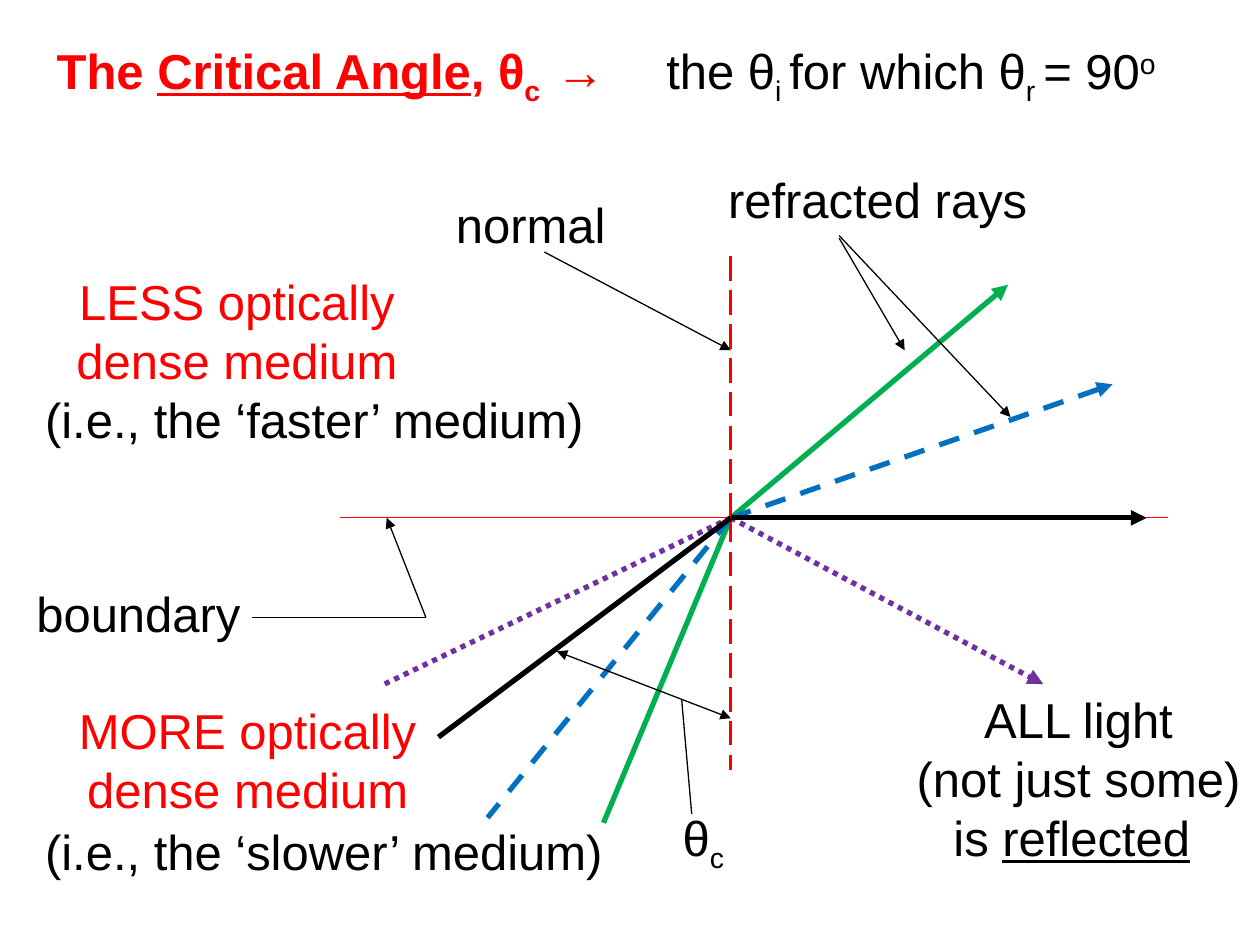
import pptx
import pptx.util
from pptx.dml.color import RGBColor
from pptx.enum.dml import MSO_LINE
from pptx.enum.shapes import MSO_CONNECTOR
from pptx.enum.text import MSO_ANCHOR, MSO_AUTO_SIZE, PP_ALIGN
from pptx.oxml.ns import qn
import lxml.etree

PX = 9144  # 100 px to the inch
FONT, SIZE = "Arial", 28
BLACK, RED = "000000", "FF0000"
GREEN, BLUE, PURPLE = "00B050", "0070C0", "7030A0"
SUB, SUPER = -25000, 30000


def color(hex_string):
    return RGBColor.from_string(hex_string)


def place(shape, box):
    shape.left, shape.top, shape.width, shape.height = (n * PX for n in box)


def write(shape, lines, ink=BLACK, align=PP_ALIGN.LEFT):
    """Fill a shape with lines; each line is a list of (text, formatting) spans."""
    frame = shape.text_frame
    frame.word_wrap = False
    frame.auto_size = MSO_AUTO_SIZE.SHAPE_TO_FIT_TEXT
    frame.vertical_anchor = MSO_ANCHOR.MIDDLE
    for index, spans in enumerate(lines):
        para = frame.add_paragraph() if index else frame.paragraphs[0]
        para.alignment = align
        for text, style in spans:
            span = para.add_run()
            span.text = text
            font = span.font
            font.name, font.size = FONT, pptx.util.Pt(SIZE)
            font.color.rgb = color(ink)
            font.bold = style.get("bold", False)
            font.underline = style.get("underline", False)
            if "baseline" in style:
                span._r.get_or_add_rPr().set("baseline", str(style["baseline"]))


def add_label(page, box, lines, ink=BLACK, align=PP_ALIGN.LEFT):
    label = page.shapes.add_textbox(0, 0, 0, 0)
    place(label, box)
    write(label, lines, ink, align)


def add_line(page, center, start, end, ink=BLACK, width=0.75, dash=None, arrows=()):
    """Draw a line between two offsets from the center; arrows names its ends."""
    x, y = center
    line = page.shapes.add_connector(
        MSO_CONNECTOR.STRAIGHT,
        (x + start[0]) * PX, (y + start[1]) * PX,
        (x + end[0]) * PX, (y + end[1]) * PX)
    line.line.color.rgb = color(ink)
    line.line.width = pptx.util.Pt(width)
    if dash:
        line.line.dash_style = dash
    outline = line.line._get_or_add_ln()
    for name in arrows:
        lxml.etree.SubElement(outline, qn("a:" + name)).set("type", "triangle")
    lxml.etree.SubElement(line._element.spPr, qn("a:effectLst"))


def add_heading(page, box):
    left, top, width, height = box
    split = 484  # where the definition starts
    bold = {"bold": True}
    title = page.shapes.title
    place(title, (left, top, 492, height))
    write(title, [[
        ("The ", bold),
        ("Critical Angle", {"bold": True, "underline": True}),
        (", θ", bold),
        ("c  ", {"bold": True, "baseline": SUB}),
        ("→", {})]], RED)
    add_label(page, (left + split, top, width - split, height), [[
        ("the θ", {}), ("i ", {"baseline": SUB}),
        ("for which θ", {}), ("r ", {"baseline": SUB}),
        ("= 90", {}), ("o", {"baseline": SUPER})]])


def add_diagram(page, box):
    left, top, width, height = box
    center = (left + 310, top + 212)
    origin = (0, 0)

    # Rays: color, dash, incident start, outgoing end
    rays = [
        (GREEN, None, (-101, 242), (220, -185)),
        (BLUE, MSO_LINE.DASH, (-193, 238), (303, -106)),
        (PURPLE, MSO_LINE.ROUND_DOT, (-275, 132), (248, 132)),
        (BLACK, None, (-232, 174), (330, 0)),
    ]

    def add_ray(ink, dash, source, target):
        add_line(page, center, origin, source, ink, 3, dash)
        add_line(page, center, origin, target, ink, 3, dash, ["tailEnd"])

    for ray in rays[:-1]:
        add_ray(*ray)

    # Normal and boundary
    for end in ((0, 200), (0, -212)):
        add_line(page, center, origin, end, RED, 1.75, MSO_LINE.LONG_DASH)
    add_line(page, center, (width - 310, 0), (-310, 0), RED)

    # Pointers from the labels
    pointers = [
        ((-148, -211), (0, -133), ["tailEnd"]),           # normal
        ((86, -222), (138, -133), ["tailEnd"]),           # refracted rays
        ((86, -224), (222, -80), ["tailEnd"]),
        ((-380, 79), (-242, 79), []),                     # boundary
        ((-242, 79), (-273, 0), ["tailEnd"]),
        ((-138, 106), (0, 159), ["headEnd", "tailEnd"]),  # critical angle
        ((-39, 144), (-31, 235), []),
    ]
    for start, end, arrows in pointers:
        add_line(page, center, start, end, arrows=arrows)

    # The critical ray lies over everything else
    add_ray(*rays[-1])


def add_medium(page, box, amount, speed, note_top):
    """Name a medium in red, with its speed in black below."""
    add_label(page, box, [[(amount + " optically", {})], [("dense medium", {})]],
              RED, PP_ALIGN.CENTER)
    add_label(page, (26, box[1] + note_top, 466, 57),
              [[(f"(i.e., the ‘{speed}’ medium)", {})]])


def add_labels(page):
    for text, box in [("refracted rays", (568, 129, 269, 57)),
                      ("normal", (352, 149, 150, 57)),
                      ("boundary", (19, 458, 194, 57))]:
        add_label(page, box, [[(text, {})]])
    add_label(page, (532, 639, 65, 57), [[("θ", {}), ("c", {"baseline": SUB})]])
    add_label(page, (716, 542, 280, 151), [
        [("ALL light", {})],
        [("(not just some)", {})],
        [("is ", {}), ("reflected", {"underline": True}), (" ", {})],
    ], align=PP_ALIGN.CENTER)


def main():
    deck = pptx.Presentation()
    deck.slide_width, deck.slide_height = 1000 * PX, 750 * PX
    page = deck.slides.add_slide(deck.slide_layouts[5])
    add_heading(page, (35, 30, 918, 57))
    add_diagram(page, (270, 199, 657, 454))
    add_labels(page)
    add_medium(page, (49, 210, 278, 104), "LESS", "faster", 94)
    add_medium(page, (51, 551, 291, 104), "MORE", "slower", 96)
    deck.save("out.pptx")


if __name__ == "__main__":
    main()
